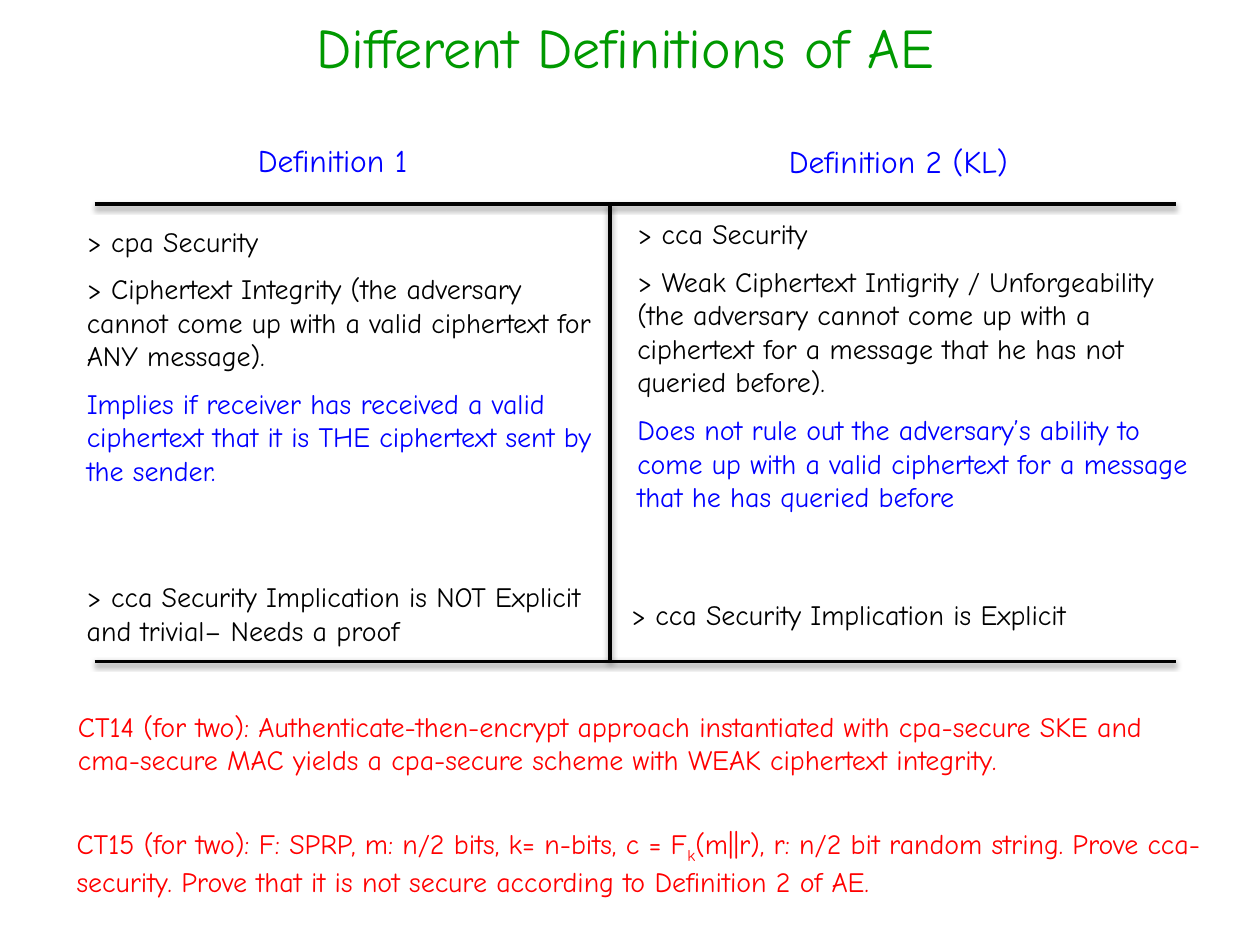
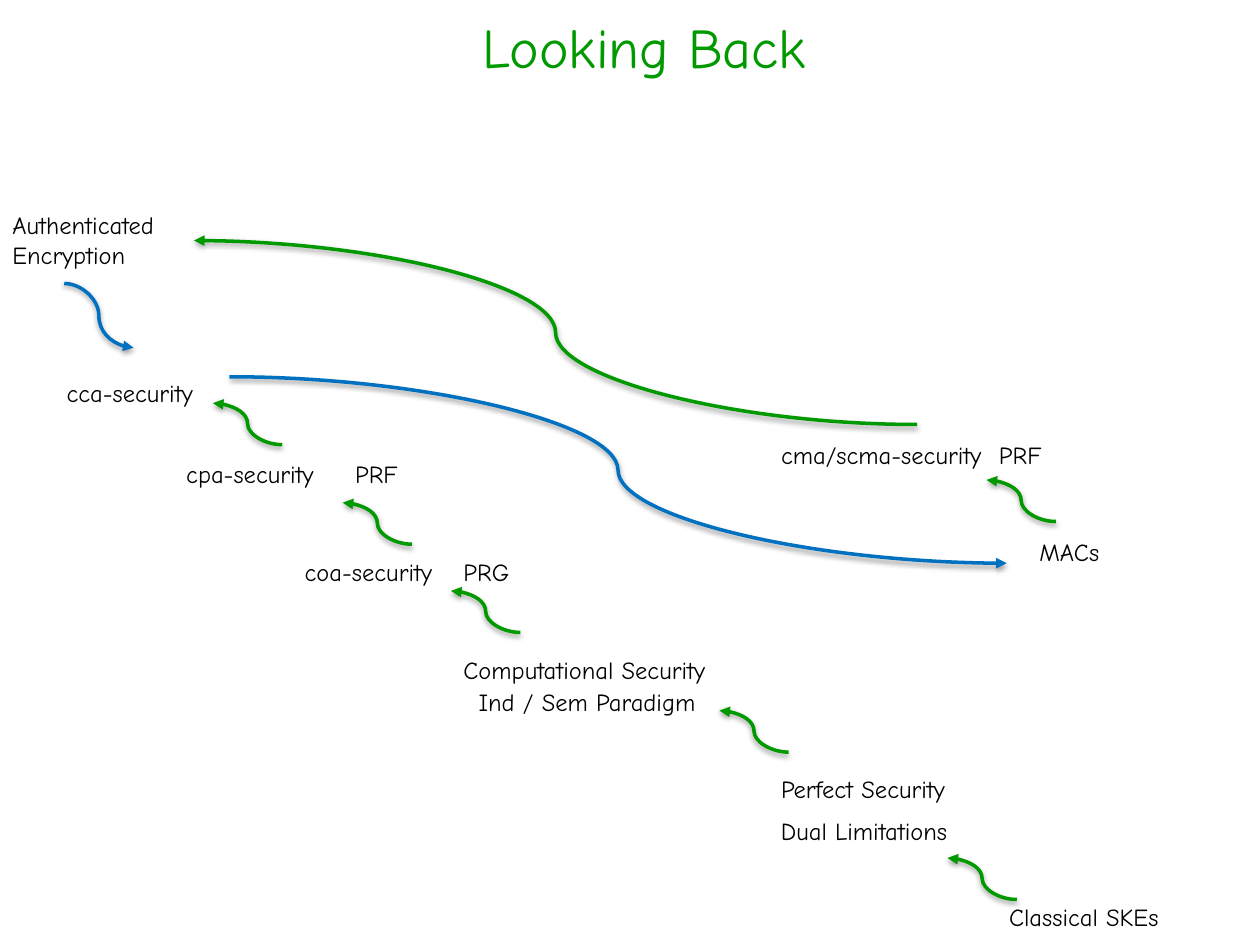
from lxml import etree
from pptx import Presentation
from pptx.dml.color import RGBColor
from pptx.enum.shapes import MSO_CONNECTOR
from pptx.enum.text import MSO_ANCHOR, MSO_AUTO_SIZE, PP_ALIGN
from pptx.oxml import parse_xml
from pptx.oxml.ns import qn
from pptx.util import Inches, Pt

STRAIGHT, CURVE = MSO_CONNECTOR.STRAIGHT, MSO_CONNECTOR.CURVE
LEFT, CENTER = PP_ALIGN.LEFT, PP_ALIGN.CENTER
TOP = MSO_ANCHOR.TOP
GROW, FIXED = MSO_AUTO_SIZE.SHAPE_TO_FIT_TEXT, MSO_AUTO_SIZE.NONE

FONT = "Comic Neue"
BLACK, GREEN, BLUE, RED, SKY = "000000", "009900", "0000FF", "FF0000", "0070C0"
TITLE_ONLY = 5
SHADOW = """<a:effectLst
  xmlns:a="http://schemas.openxmlformats.org/drawingml/2006/main">
  <a:outerShdw blurRad="40000" dist="20000" dir="5400000" rotWithShape="0">
    <a:srgbClr val="000000"><a:alpha val="38000"/></a:srgbClr>
  </a:outerShdw></a:effectLst>"""


def color(code):
    return RGBColor.from_string(code)


def add_run(para, text, size, hue, sub=False):
    run = para.add_run()
    run.text = text
    run.font.name = FONT
    run.font.size = Pt(size)
    run.font.color.rgb = color(hue)
    if sub:
        run.font._element.set("baseline", "-25000")


def add_title(slide, text, left, width):
    title = slide.shapes.title
    title.left, title.top = Inches(left), Inches(0.05)
    title.width, title.height = Inches(width), Inches(0.55)
    frame = title.text_frame
    frame.auto_size = FIXED
    frame.vertical_anchor = TOP
    para = frame.paragraphs[0]
    para.alignment = CENTER
    add_run(para, text, 32, GREEN)


def add_text(slide, box, paras, size=16, align=LEFT, gap=True):
    """Each paragraph is a list of (text, colour[, subscript]) runs."""
    frame = slide.shapes.add_textbox(*map(Inches, box)).text_frame
    frame.word_wrap = True
    frame.auto_size = GROW
    for i, runs in enumerate(paras):
        para = frame.add_paragraph() if i else frame.paragraphs[0]
        para.alignment = align
        if gap:
            para.space_before = Pt(size / 2)
        for text, hue, *sub in runs:
            add_run(para, text, size, hue, bool(sub))


def add_line(slide, kind, start, end, hue, arrow=False):
    link = slide.shapes.add_connector(kind, *map(Inches, start + end))
    link.line.color.rgb = color(hue)
    link.line.width = Pt(2)
    props = link._element.spPr
    if arrow:
        etree.SubElement(props.get_or_add_ln(), qn("a:tailEnd"), type="triangle")
    props.append(parse_xml(SHADOW))


def add_step(slide, x, y):
    """Short green arrow that climbs to the left and ends at x, y."""
    add_line(slide, CURVE, (x + 0.55, y + 0.33), (x, y), GREEN, True)


def build_table(slide):
    add_title(slide, "Different Definitions of AE", 0.2, 9.53)

    # Column heads
    for left, top, head in ((0.75, 1.07, "Definition 1"),
                            (5.24, 1.08, "Definition 2 (KL)")):
        add_text(slide, (left, top, 3.78, 0.4), [[(head, BLUE)]], 18, CENTER)

    # Rules
    upper, lower, mid = 1.62, 5.25, 4.84
    add_line(slide, STRAIGHT, (mid, upper), (mid, lower), BLACK)
    for y in (upper, lower):
        add_line(slide, STRAIGHT, (0.75, y), (9.33, y), BLACK)

    # Column bodies
    add_text(slide, (0.59, 1.73, 4.25, 2.26), [
        [("> cpa Security", BLACK)],
        [("> Ciphertext Integrity (the adversary cannot come up with a valid "
          "ciphertext for ANY message).", BLACK)],
        [("Implies if receiver has received a valid ciphertext that it is THE "
          "ciphertext sent by the sender.", BLUE)]])
    add_text(slide, (4.96, 1.67, 4.57, 2.52), [
        [("> cca Security", BLACK)],
        [("> Weak Ciphertext Intigrity / Unforgeability (the adversary cannot "
          "come up with a ciphertext for a message that he has not queried "
          "before).", BLACK)],
        [("Does not rule out the adversary’s ability to come up with a valid "
          "ciphertext for a message that he has queried before", BLUE)]])
    add_text(slide, (0.59, 4.55, 4.37, 0.64), [
        [("> cca Security Implication is NOT Explicit and trivial– "
          "Needs a proof", BLACK)]])
    add_text(slide, (4.91, 4.69, 4.32, 0.37), [
        [("> cca Security Implication is Explicit", BLACK)]])

    # Tasks
    add_text(slide, (0.52, 5.58, 9.21, 0.64), [
        [("CT14 (for two): Authenticate-then-encrypt approach instantiated with "
          "cpa-secure SKE and cma-secure MAC yields a cpa-secure scheme with "
          "WEAK ciphertext integrity.", RED)]])
    add_text(slide, (0.51, 6.51, 9.21, 0.64), [
        [("CT15 (for two): F: SPRP, m: n/2 bits, k= n-bits, c = F", RED),
         ("k", RED, True),
         ("(m||r), r: n/2 bit random string. Prove cca-security. Prove that it "
          "is not secure according to Definition 2 of AE.", RED)]])


def build_map(slide):
    add_title(slide, "Looking Back", -0.12, 10.47)

    # Topics
    topics = (
        (6.1, 6.09, 2.05, "Perfect Security"),
        (3.58, 5.15, 2.83, "Computational Security"),
        (3.7, 5.4, 2.56, "Ind / Sem Paradigm"),
        (2.32, 4.37, 1.57, "coa-security"),
        (3.58, 4.37, 0.79, "PRG"),
        (1.38, 3.59, 1.57, "cpa-security"),
        (2.72, 3.59, 0.79, "PRF"),
        (0.43, 2.95, 1.73, "cca-security"),
        (0, 1.62, 1.73, "Authenticated Encryption"),
        (7.91, 7.11, 2.05, "Classical SKEs"),
        (6.1, 6.43, 2.13, "Dual Limitations"),
        (8.15, 4.21, 0.94, "MACs"),
        (6.1, 3.44, 1.89, "cma/scma-security"),
        (7.83, 3.44, 0.79, "PRF"),
    )
    for left, top, width, text in topics:
        add_text(slide, (left, top, width, 0.34), [[(text, BLACK)]], 14, gap=False)

    # Steps up the ladder
    for x, y in ((7.52, 6.81), (5.71, 5.64), (3.58, 4.69),
                 (2.72, 3.99), (1.69, 3.2), (7.83, 3.81)):
        add_step(slide, x, y)

    # Links between the branches
    for start, end, hue in (((1.82, 2.99), (7.99, 4.47), SKY),
                            ((7.28, 3.37), (1.54, 1.91), GREEN),
                            ((0.51, 2.25), (1.06, 2.76), SKY)):
        add_line(slide, CURVE, start, end, hue, True)


def main():
    deck = Presentation()
    deck.slide_width, deck.slide_height = Inches(10), Inches(7.5)
    for build in (build_table, build_map):
        build(deck.slides.add_slide(deck.slide_layouts[TITLE_ONLY]))
    deck.save("out.pptx")


if __name__ == "__main__":
    main()
